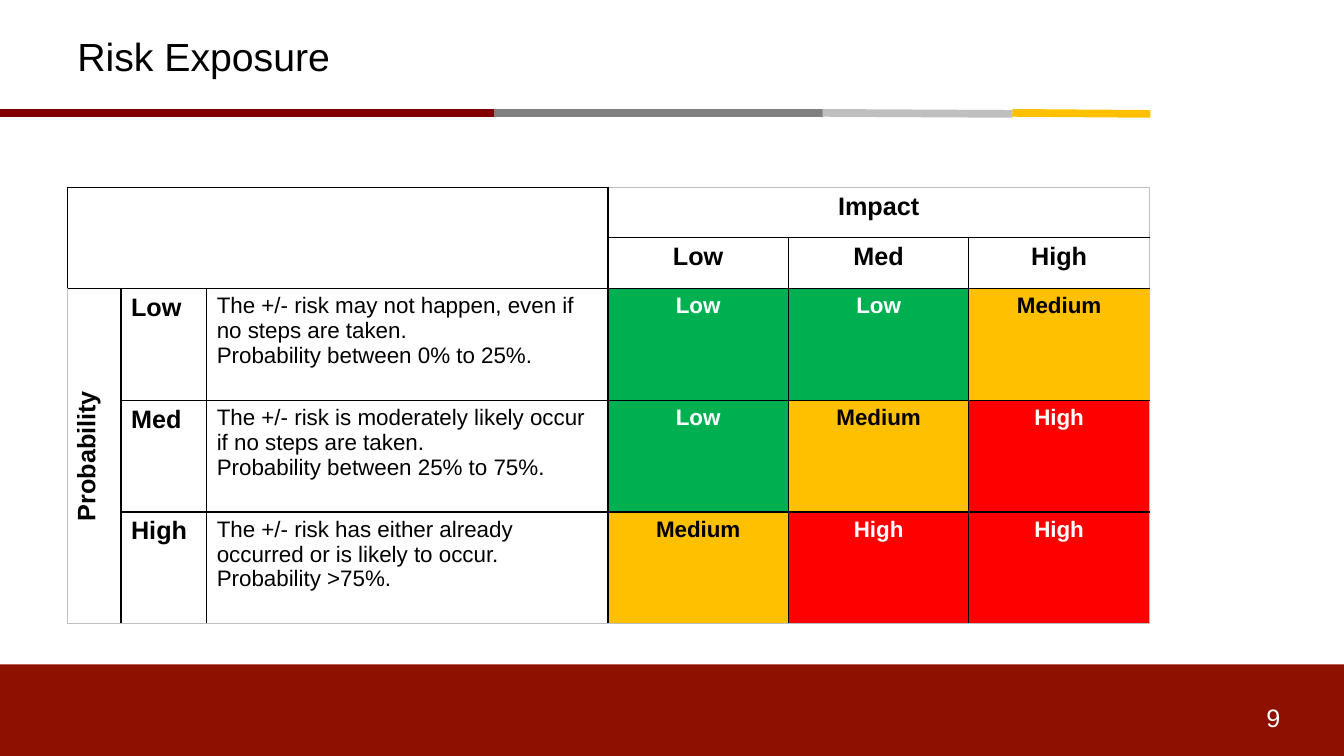
from lxml.etree import SubElement as Sub
from pptx import Presentation
from pptx.dml.color import RGBColor as RGB
from pptx.enum.shapes import MSO_CONNECTOR as Line, MSO_SHAPE as Shape
from pptx.enum.text import MSO_ANCHOR as Anchor, PP_ALIGN as Align
from pptx.oxml.ns import qn
from pptx.util import Inches, Pt

COLORS = {
    "black": "000000", "white": "FFFFFF", "band": "8E1000",
    "maroon": "800000", "gray": "808080", "silver": "BFBFBF",
    "Low": "00B050", "Medium": "FFC000", "High": "FF0000",
}
LEVELS = ["Low", "Med", "High"]
NOTES = [
    "The +/- risk may not happen, even if no steps are taken.\n"
    "Probability between 0% to 25%.",
    "The +/- risk is moderately likely occur if no steps are taken.\n"
    "Probability between 25% to 75%.",
    "The +/- risk has either already occurred or is likely to occur.\n"
    "Probability >75%.",
]
RISKS = [
    ["Low", "Low", "Medium"],
    ["Low", "Medium", "High"],
    ["Medium", "High", "High"],
]
COLS = [0.53, 0.85, 3.98, 1.79, 1.79, 1.79]
ROWS = [0.5, 0.5, 1.11, 1.11, 1.11]


def tint(name):
    """Return the named colour."""
    return RGB.from_string(COLORS[name])


def write(frame, text, size, color="black", bold=False, align=Align.LEFT):
    """Fill a text frame with evenly styled paragraphs."""
    frame.text = text
    for para in frame.paragraphs:
        para.alignment = align
        for run in para.runs:
            font = run.font
            font.name, font.size, font.bold = "Arial", Pt(size), bold
            font.color.rgb = tint(color)


def add_text(slide, box, text, size, color="black", align=Align.LEFT):
    """Add a text box that is centred vertically."""
    frame = slide.shapes.add_textbox(*map(Inches, box)).text_frame
    frame.word_wrap = True
    frame.vertical_anchor = Anchor.MIDDLE
    write(frame, text, size, color, align=align)


def add_rule(slide, left, top):
    """Draw the four-colour rule under the title."""
    parts = [("maroon", 4.9, 0), ("gray", 3.26, 0),
             ("silver", 1.88, 0.01), ("Medium", 1.37, 0.01)]
    for color, width, drop in parts:
        ends = left, top, left + width, top + drop
        line = slide.shapes.add_connector(Line.STRAIGHT, *map(Inches, ends))
        line.line.color.rgb = tint(color)
        line.line.width = Pt(5.5)
        Sub(line._element.spPr, qn("a:effectLst"))
        left += width


def add_footer(slide, left, top, width, height):
    """Draw the footer band with the page number."""
    box = map(Inches, (left, top, width, height))
    band = slide.shapes.add_shape(Shape.RECTANGLE, *box)
    band.shadow.inherit = False
    band.fill.solid()
    band.fill.fore_color.rgb = tint("band")
    band.line.fill.background()
    number = left + width - 1.02, top + 0.33, 0.64, 0.4
    add_text(slide, number, "9", 18, "white", Align.CENTER)


def set_edge(cell, side, color):
    """Give one side of a cell a thin line."""
    edge = Sub(cell._tc.get_or_add_tcPr(), qn("a:ln" + side), w=str(Pt(1)))
    Sub(Sub(edge, qn("a:solidFill")), qn("a:srgbClr"), val=COLORS[color])


def add_block(grid, row, col, high=1, wide=1, fill=None):
    """Merge a block of cells, then set its borders and fill."""
    first = grid.cell(row, col)
    end_row, end_col = row + high - 1, col + wide - 1
    if high * wide > 1:
        first.merge(grid.cell(end_row, end_col))
    corner = row == col == 0
    for y in range(row, row + high):
        for x in range(col, col + wide):
            cell = grid.cell(y, x)
            sides = [
                ("L", x == col, col == 0),
                ("R", x == end_col, end_col == len(COLS) - 1),
                ("T", y == row, row == 0),
                ("B", y == end_row, end_row == len(ROWS) - 1),
            ]
            for side, edge, outer in sides:
                if edge or (y, x) == (row, col):
                    pale = outer and not corner
                    set_edge(cell, side, "silver" if pale else "black")
            if fill:
                cell.fill.solid()
                cell.fill.fore_color.rgb = tint(fill)
            else:
                cell.fill.background()
    return first


def add_matrix(slide, left, top):
    """Build the table of probability against impact."""
    box = left, top, sum(COLS), sum(ROWS)
    frame = slide.shapes.add_table(len(ROWS), len(COLS), *map(Inches, box))
    grid = frame.table
    grid.first_row = grid.horz_banding = False
    for col, width in zip(grid.columns, COLS):
        col.width = Inches(width)
    for row, height in zip(grid.rows, ROWS):
        row.height = Inches(height)

    add_block(grid, 0, 0, 2, 3)
    head = {"size": 18, "bold": True}
    mid = {"bold": True, "align": Align.CENTER}
    write(add_block(grid, 0, 3, 1, 3).text_frame, "Impact", 18, **mid)
    side = add_block(grid, 2, 0, 3, 1)
    write(side.text_frame, "Probability", 18, **mid)
    side.vertical_anchor = Anchor.MIDDLE
    side._tc.get_or_add_tcPr().set("vert", "vert270")

    for i, (level, note, risks) in enumerate(zip(LEVELS, NOTES, RISKS)):
        row = i + 2
        write(add_block(grid, 1, i + 3).text_frame, level, 18, **mid)
        write(add_block(grid, row, 1).text_frame, level, **head)
        write(add_block(grid, row, 2).text_frame, note, 16)
        for col, risk in enumerate(risks, 3):
            cell = add_block(grid, row, col, fill=risk)
            color = "black" if risk == "Medium" else "white"
            write(cell.text_frame, risk, 16, color, **mid)


def main():
    """Build and save the slide."""
    deck = Presentation()
    deck.slide_width, deck.slide_height = Inches(13.33), Inches(7.5)
    slide = deck.slides.add_slide(deck.slide_layouts[6])
    add_footer(slide, 0, 6.59, 13.33, 0.91)
    add_rule(slide, 0, 1.12)
    add_text(slide, (0.67, 0.04, 12, 1.03), "Risk Exposure", 28)
    add_matrix(slide, 0.67, 1.86)
    deck.save("out.pptx")


if __name__ == "__main__":
    main()
